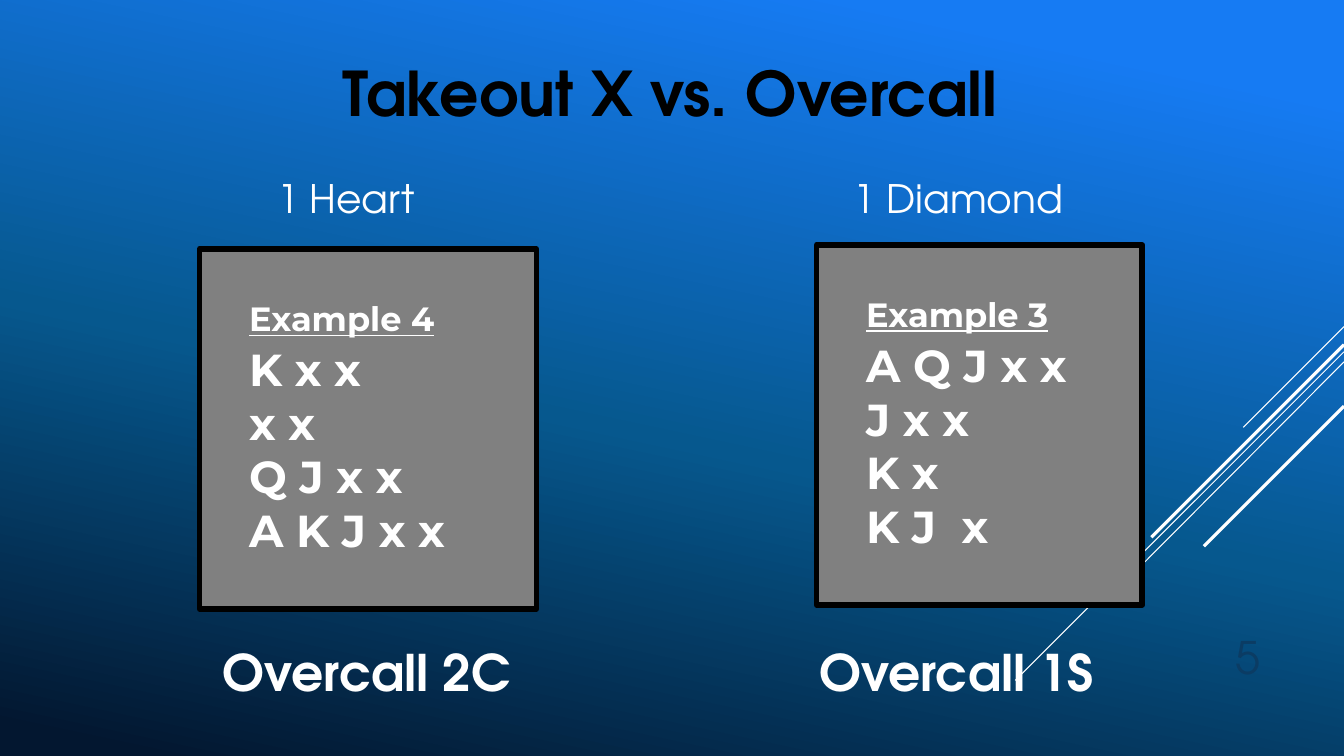
from copy import deepcopy
from dataclasses import dataclass

from pptx import Presentation
from pptx.dml.color import RGBColor
from pptx.enum.shapes import MSO_CONNECTOR as Connector, MSO_SHAPE as Preset
from pptx.enum.text import MSO_ANCHOR as Anchor, PP_ALIGN as Align
from pptx.oxml.ns import qn
from pptx.oxml.xmlchemy import OxmlElement
from pptx.slide import Slide
from pptx.text.text import _Paragraph as Paragraph
from pptx.util import Inches, Pt


@dataclass(frozen=True)
class Theme:
    display: str = "TeX Gyre Adventor"
    body: str = "Montserrat"
    white: str = "FFFFFF"
    black: str = "000000"
    card: str = "808080"
    number: str = "0B3C64"
    backdrop: tuple = ((0.10, "167BF3"), (0.56, "06588E"), (0.97, "031730"))
    backdrop_angle: int = 102
    title_size: int = 44
    call_size: int = 36
    hand_size: int = 32
    opening_size: int = 28
    heading_size: int = 24
    border: float = 4


@dataclass(frozen=True)
class Label:
    text: str
    left: float
    top: float
    width: float
    height: float
    size: int
    color: str
    bold: bool = False
    align: Align = Align.LEFT


@dataclass(frozen=True)
class HandCard:
    heading: str
    suits: tuple[str, ...]
    left: float
    top: float
    width: float


@dataclass(frozen=True)
class Ray:
    start_y: float
    end_x: float
    end_y: float
    weight: float


THEME = Theme()
PAGE_WIDTH, PAGE_HEIGHT = 13.33, 7.5
CARD_HEIGHT = 3.57

RAYS = (
    Ray(3.24, 12.33, 4.24, 0.75),
    Ray(3.49, 10.07, 6.75, 0.75),
    Ray(3.59, 11.26, 5.67, 0.75),
    Ray(3.42, 11.42, 5.33, 2.25),
    Ray(4.03, 11.94, 5.42, 2.25),
)
CARDS = (
    HandCard("Example 4", ("K x x", "x x", "Q J x x", "A K J x x"), 1.98, 2.47, 3.34),
    HandCard("Example 3", ("A Q J x x", "J x x", "K x", "K J  x"), 8.1, 2.43, 3.23),
)
LABELS = (
    Label("1 Heart", 2.65, 1.68, 2.91, 0.57, THEME.opening_size, THEME.white),
    Label("1 Diamond", 8.37, 1.68, 2.55, 0.57, THEME.opening_size, THEME.white),
    Label("Takeout X vs. Overcall", 3.3, 0.5, 8.44, 0.84, THEME.title_size, THEME.black, True),
    Label("Overcall 2C", 2.11, 6.31, 3.34, 0.71, THEME.call_size, THEME.white, True),
    Label("Overcall 1S", 8.03, 6.31, 3.34, 0.71, THEME.call_size, THEME.white, True),
    Label("5", 11.6, 6.2, 1, 0.64, THEME.hand_size, THEME.number, align=Align.RIGHT),
)


def rgb(color: str) -> RGBColor:
    return RGBColor.from_string(color)


def paint_backdrop(page: Slide) -> None:
    fill = page.background.fill
    fill.gradient()
    fill.gradient_angle = 360 - THEME.backdrop_angle
    stop_list = next(page.element.iter(qn("a:gsLst")))
    stop_list.append(deepcopy(stop_list[-1]))
    for stop, (position, color) in zip(fill.gradient_stops, THEME.backdrop):
        stop.position = position
        stop.color.rgb = rgb(color)


def add_span(para: Paragraph, text: str, font: str, size: int, color: str,
             bold: bool, underline: bool = False) -> None:
    span = para.add_run()
    span.text = text
    span.font.name = font
    span.font.size = Pt(size)
    span.font.color.rgb = rgb(color)
    span.font.bold = bold
    span.font.underline = underline


def add_ray(page: Slide, ray: Ray) -> None:
    line = page.shapes.add_connector(
        Connector.STRAIGHT, Inches(PAGE_WIDTH), Inches(ray.start_y),
        Inches(ray.end_x), Inches(ray.end_y))
    line.line.color.rgb = rgb(THEME.white)
    line.line.width = Pt(ray.weight)
    line.element.spPr.append(OxmlElement("a:effectLst"))


def add_card(page: Slide, card: HandCard) -> None:
    box = page.shapes.add_shape(
        Preset.RECTANGLE, Inches(card.left), Inches(card.top),
        Inches(card.width), Inches(CARD_HEIGHT))
    box.shadow.inherit = False
    box.fill.solid()
    box.fill.fore_color.rgb = rgb(THEME.card)
    box.line.color.rgb = rgb(THEME.black)
    box.line.width = Pt(THEME.border)
    frame = box.text_frame
    frame.word_wrap = True
    frame.vertical_anchor = Anchor.TOP
    frame.margin_left = frame.margin_top = Inches(0.49)
    frame.margin_right = frame.margin_bottom = Inches(0.1)
    para = frame.paragraphs[0]
    para.alignment = Align.LEFT
    para.space_after = Pt(2)
    add_span(para, card.heading, THEME.body, THEME.heading_size, THEME.white, True, True)
    for suit in card.suits:
        para = frame.add_paragraph()
        para.alignment = Align.LEFT
        add_span(para, suit, THEME.body, THEME.hand_size, THEME.white, True)


def add_label(page: Slide, label: Label) -> None:
    box = page.shapes.add_textbox(
        Inches(label.left), Inches(label.top), Inches(label.width), Inches(label.height))
    box.text_frame.word_wrap = True
    para = box.text_frame.paragraphs[0]
    para.alignment = label.align
    add_span(para, label.text, THEME.display, label.size, label.color, label.bold)


def main() -> None:
    deck = Presentation()
    deck.slide_width = Inches(PAGE_WIDTH)
    deck.slide_height = Inches(PAGE_HEIGHT)
    page = deck.slides.add_slide(deck.slide_layouts[6])
    paint_backdrop(page)
    for ray in RAYS:
        add_ray(page, ray)
    for card in CARDS:
        add_card(page, card)
    for label in LABELS:
        add_label(page, label)
    deck.save("out.pptx")


if __name__ == "__main__":
    main()
